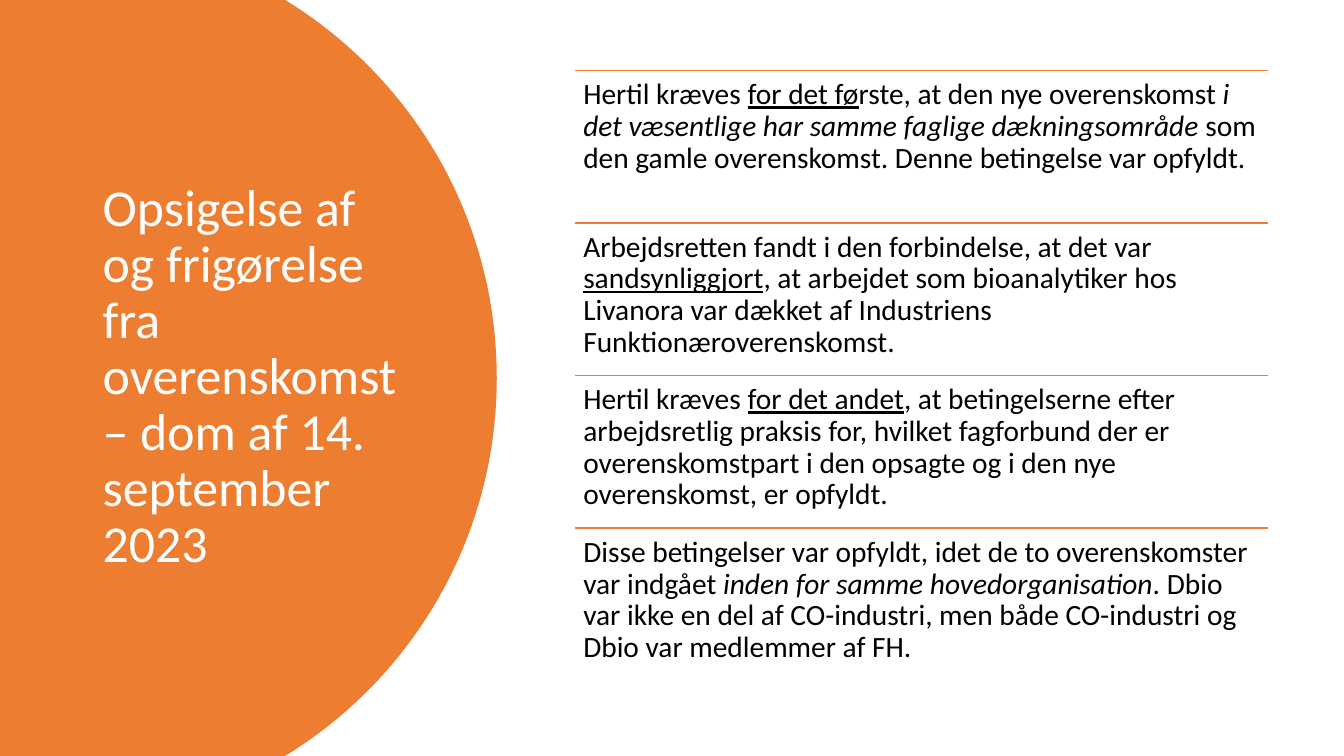
"""Build a slide with a curved title panel and four ruled statements."""
import pptx
import pptx.dml.color
import pptx.enum.shapes
import pptx.enum.text
import pptx.oxml
import pptx.oxml.ns
import pptx.util

Cm = pptx.util.Cm
Pt = pptx.util.Pt
ORANGE, WHITE, BLACK = "ED7D31", "FFFFFF", "000000"
TITLE = "Opsigelse af og frigørelse fra overenskomst – dom af 14. september 2023"
ITEMS = [
    [("Hertil kræves ", ""), ("for det fø", "u"),
     ("rste, at den nye overenskomst ", ""),
     ("i det væsentlige har samme faglige dækningsområde", "i"),
     (" som den gamle overenskomst. Denne betingelse var opfyldt.", "")],
    [("Arbejdsretten fandt i den forbindelse, at det var ", ""),
     ("sandsynliggjort", "u"),
     (", at arbejdet som bioanalytiker hos Livanora var dækket af "
      "Industriens Funktionæroverenskomst.", "")],
    [("Hertil kræves ", ""), ("for det andet", "u"),
     (", at betingelserne efter arbejdsretlig praksis for, hvilket fagforbund "
      "der er overenskomstpart i den opsagte og i den nye overenskomst, "
      "er opfyldt.", "")],
    [("Disse betingelser var opfyldt, idet de to overenskomster var indgået ", ""),
     ("inden for samme hovedorganisation", "i"),
     (". Dbio var ikke en del af CO-industri, men både CO-industri og Dbio "
      "var medlemmer af FH.", "")],
]


def color(code):
    """Turn a hex string into a colour."""
    return pptx.dml.color.RGBColor.from_string(code)


def style(run, size, code):
    """Set the font of a run."""
    run.font.name = "Calibri"
    run.font.size = Pt(size)
    run.font.color.rgb = color(code)


def text_box(slide, left, top, width, height):
    """Add a wrapping text box and return its frame."""
    frame = slide.shapes.add_textbox(Cm(left), Cm(top), Cm(width), Cm(height)).text_frame
    frame.word_wrap = True
    frame.paragraphs[0].line_spacing = 0.9
    return frame


def bezier(t, a, b, c, d):
    """Give the value of a cubic curve at t."""
    s = 1 - t
    return s**3 * a + 3 * s * s * t * b + 3 * s * t * t * c + t**3 * d


def panel(slide, left, top, width, height):
    """Draw the title panel with its bulging right edge."""
    steps = 40
    upper = [(bezier(n / steps, 0.574, 0.83, 1, 1),
              bezier(n / steps, 0, 0.103, 0.288, 0.5)) for n in range(steps + 1)]
    lower = [(x, 1 - y) for x, y in reversed(upper[:-1])]
    points = [(Cm(left + x * width), Cm(top + y * height))
              for x, y in upper + lower + [(0, 1)]]
    build = slide.shapes.build_freeform(Cm(left), Cm(top))
    build.add_line_segments(points, close=True)
    shape = build.convert_to_shape()
    shape.shadow.inherit = False
    shape.fill.solid()
    shape.fill.fore_color.rgb = color(ORANGE)
    shape.line.fill.background()

    frame = text_box(slide, left + 2.34, top + 1.78, 8.2, height - 3.58)
    frame.vertical_anchor = pptx.enum.text.MSO_ANCHOR.MIDDLE
    frame.paragraphs[0].text = TITLE
    style(frame.paragraphs[0].runs[0], 37, WHITE)


def rule(slide, left, top, width):
    """Draw a thin line across the column."""
    line = slide.shapes.add_connector(
        pptx.enum.shapes.MSO_CONNECTOR.STRAIGHT,
        Cm(left), Cm(top), Cm(left + width), Cm(top))
    line.line.color.rgb = color(ORANGE)
    line.line.width = Pt(1)
    props = line._element.find(pptx.oxml.ns.qn("p:spPr"))
    props.append(pptx.oxml.parse_xml(
        f"<a:effectLst {pptx.oxml.ns.nsdecls('a')}/>"))


def column(slide, left, top, width, height):
    """Stack the statements in equal rows, each under a line."""
    row = height / len(ITEMS)
    for n, item in enumerate(ITEMS):
        y = top + n * row
        rule(slide, left, y, width)
        frame = text_box(slide, left, y, width, row)
        frame.margin_left = frame.margin_right = Cm(0.22)
        frame.margin_top = frame.margin_bottom = Cm(0.22)
        for words, mark in item:
            run = frame.paragraphs[0].add_run()
            run.text = words
            style(run, 21, BLACK)
            run.font.underline = mark == "u"
            run.font.italic = mark == "i"


def main():
    """Build and save the slide."""
    deck = pptx.Presentation()
    deck.slide_width, deck.slide_height = Cm(33.87), Cm(19.05)
    slide = deck.slides.add_slide(deck.slide_layouts[6])
    panel(slide, 0, 0, 12.52, 19.05)
    column(slide, 14.48, 1.78, 17.48, 15.37)
    deck.save("out.pptx")


if __name__ == "__main__":
    main()
